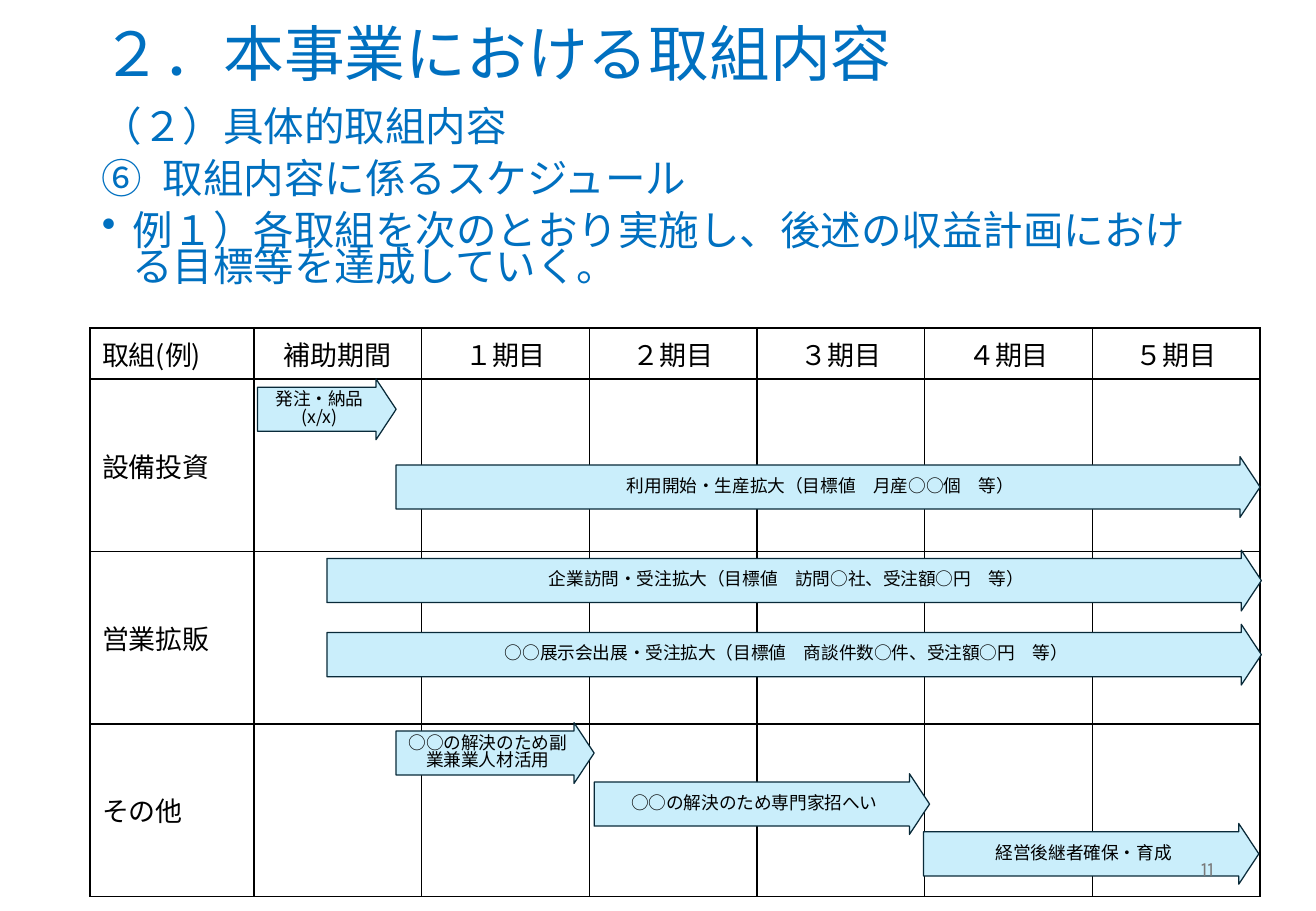
from pptx import Presentation
from pptx.dml.color import RGBColor
from pptx.enum.shapes import MSO_SHAPE
from pptx.enum.text import MSO_ANCHOR, PP_ALIGN
from pptx.oxml import parse_xml
from pptx.oxml.ns import nsdecls
from pptx.util import Inches, Pt

THEME = {
    "blue": RGBColor.from_string("0070C0"),
    "black": RGBColor.from_string("000000"),
    "gray": RGBColor.from_string("797979"),
    "sky": RGBColor.from_string("CAEEFB"),
    "navy": RGBColor.from_string("092A39"),
    "face": "Noto Sans CJK JP",
    "num_face": "Karla",
    "title": 36, "body": 24, "cell": 16, "arrow": 10.5, "num": 12,
}


def write(para, text, size, color, face="face", **form):
    """Fill a paragraph with one styled run."""
    for key, val in form.items():
        setattr(para, key, val)
    run = para.add_run()
    run.text = text
    look = {"size": Pt(THEME[size]), "name": THEME[face]}
    for key, val in look.items():
        setattr(run.font, key, val)
    run.font.color.rgb = THEME[color]
    run._r.get_or_add_rPr().append(parse_xml(
        f'<a:ea {nsdecls("a")} typeface="{THEME[face]}"/>'))


def add_box(left, top, width, height, anchor):
    """Add a wrapping text box and return its frame."""
    box = slide.shapes.add_textbox(
        Inches(left), Inches(top), Inches(width), Inches(height))
    frame = box.text_frame
    for key, val in {"word_wrap": True, "vertical_anchor": anchor}.items():
        setattr(frame, key, val)
    return frame


deck = Presentation()
deck.slide_width, deck.slide_height = Inches(10.83), Inches(7.5)
slide = deck.slides.add_slide(deck.slide_layouts[6])

# Schedule table
heads = ["取組(例)", "補助期間", "１期目", "２期目", "３期目", "４期目", "５期目"]
tasks = ["設備投資", "営業拡販", "その他"]
grid = slide.shapes.add_table(
    len(tasks) + 1, len(heads),
    Inches(0.74), Inches(2.7), Inches(9.63), Inches(4.68)).table
grid.first_row = grid.horz_banding = False
for i, col in enumerate(grid.columns):
    col.width = Inches(1.38 if i else 1.35)
for i, row in enumerate(grid.rows):
    row.height = Inches(1.42 if i else 0.42)
    for j, cell in enumerate(row.cells):
        cell.vertical_anchor = MSO_ANCHOR.MIDDLE if i else MSO_ANCHOR.TOP
        text = heads[j] if i == 0 else tasks[i - 1] if j == 0 else ""
        if text:
            write(cell.text_frame.paragraphs[0], text, "cell", "black",
                  alignment=PP_ALIGN.CENTER if j else PP_ALIGN.LEFT)
        for side in ("lnL", "lnR", "lnT", "lnB"):
            cell._tc.get_or_add_tcPr().append(parse_xml(
                f'<a:{side} {nsdecls("a")} w="{Pt(1)}"><a:solidFill>'
                f'<a:srgbClr val="{THEME["black"]}"/></a:solidFill></a:{side}>'))
        cell.fill.background()

# Title
frame = add_box(0.74, 0.11, 9.34, 0.77, MSO_ANCHOR.MIDDLE)
write(frame.paragraphs[0], "２．本事業における取組内容", "title", "blue",
      line_spacing=0.73)

# Body: text, indent, bullet
points = [
    ("（２）具体的取組内容", 0, None),
    ("取組内容に係るスケジュール", 0.5,
     'buAutoNum {} type="circleNumDbPlain" startAt="6"'),
    ("例１）各取組を次のとおり実施し、後述の収益計画における目標等を達成していく。",
     0.25, 'buChar {} char="•"'),
]
frame = add_box(0.74, 0.88, 9.34, 1.8, MSO_ANCHOR.TOP)
for i, (text, dent, mark) in enumerate(points):
    para = frame.add_paragraph() if i else frame.paragraphs[0]
    if mark:
        props = para._p.get_or_add_pPr()
        props.set("marL", str(Inches(dent)))
        props.set("indent", str(-Inches(dent)))
        props.append(parse_xml(f'<a:{mark.format(nsdecls("a"))}/>'))
    write(para, text, "body", "blue", line_spacing=0.73,
          space_before=Pt(10 if i else 0))

# Schedule arrows: left, top, width, text
arrows = [
    (2.12, 3.12, 1.14, "発注・納品(x/x)"),
    (3.26, 3.76, 7.11, "利用開始・生産拡大（目標値　月産○○個　等）"),
    (2.69, 4.53, 7.69, "企業訪問・受注拡大（目標値　訪問○社、受注額○円　等）"),
    (2.69, 5.14, 7.69, "○○展示会出展・受注拡大（目標値　商談件数○件、受注額○円　等）"),
    (3.26, 5.95, 1.63, "○○の解決のため副業兼業人材活用"),
    (4.89, 6.37, 2.76, "○○の解決のため専門家招へい"),
    (7.6, 6.78, 2.76, "経営後継者確保・育成"),
]
for left, top, width, text in arrows:
    arrow = slide.shapes.add_shape(
        MSO_SHAPE.RIGHT_ARROW,
        Inches(left), Inches(top), Inches(width), Inches(0.5))
    arrow.shadow.inherit = False
    arrow.adjustments[0], arrow.adjustments[1] = 0.726, 0.33
    arrow.fill.solid()
    arrow.fill.fore_color.rgb = THEME["sky"]
    arrow.line.color.rgb = THEME["navy"]
    arrow.line.width = Pt(0.75)
    frame = arrow.text_frame
    for key, val in {"word_wrap": True,
                     "vertical_anchor": MSO_ANCHOR.MIDDLE}.items():
        setattr(frame, key, val)
    write(frame.paragraphs[0], text, "arrow", "black",
          alignment=PP_ALIGN.CENTER, line_spacing=0.82)

# Page number
frame = add_box(7.65, 6.95, 2.44, 0.4, MSO_ANCHOR.MIDDLE)
write(frame.paragraphs[0], "11", "num", "gray", "num_face",
      alignment=PP_ALIGN.RIGHT)

deck.save("out.pptx")
